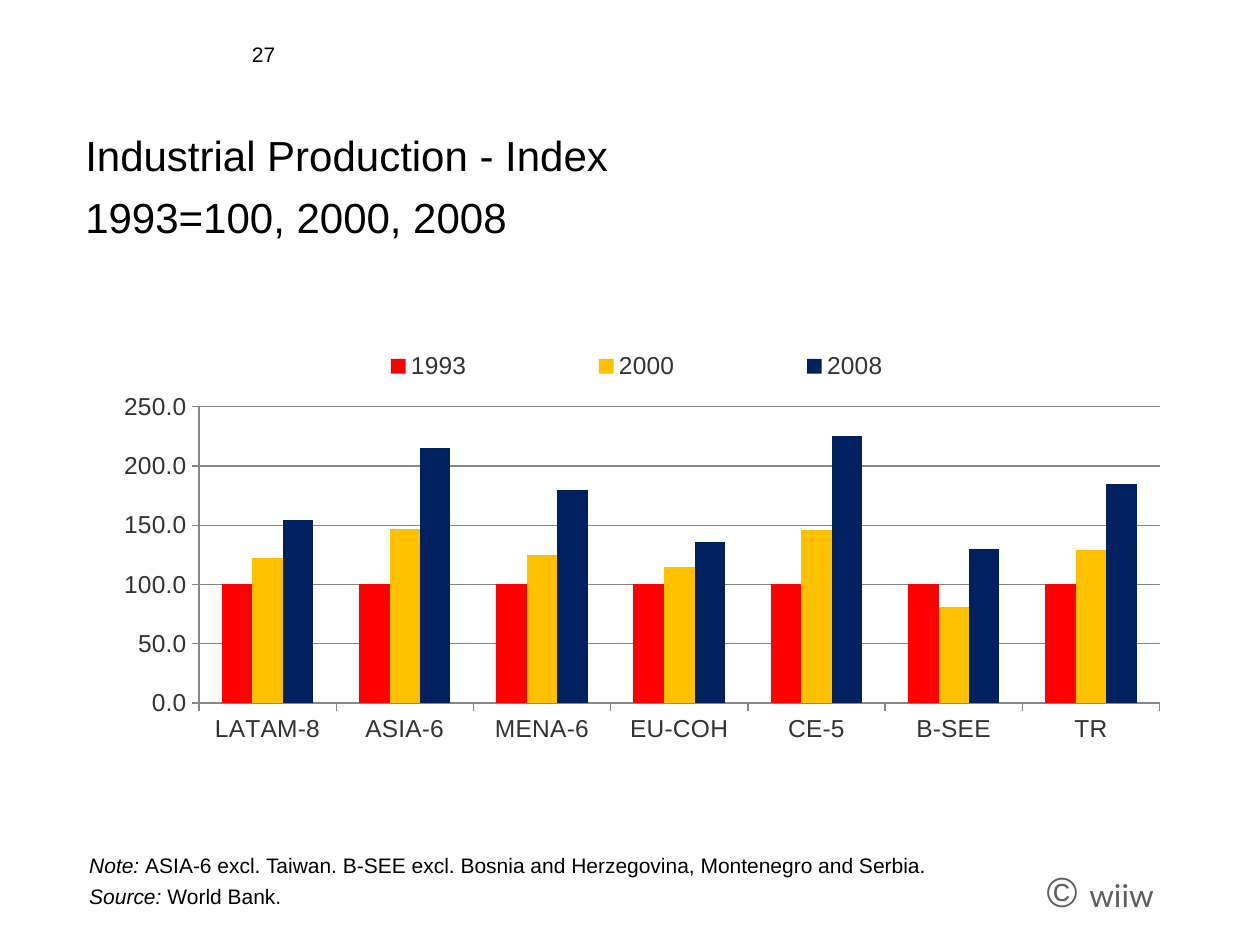
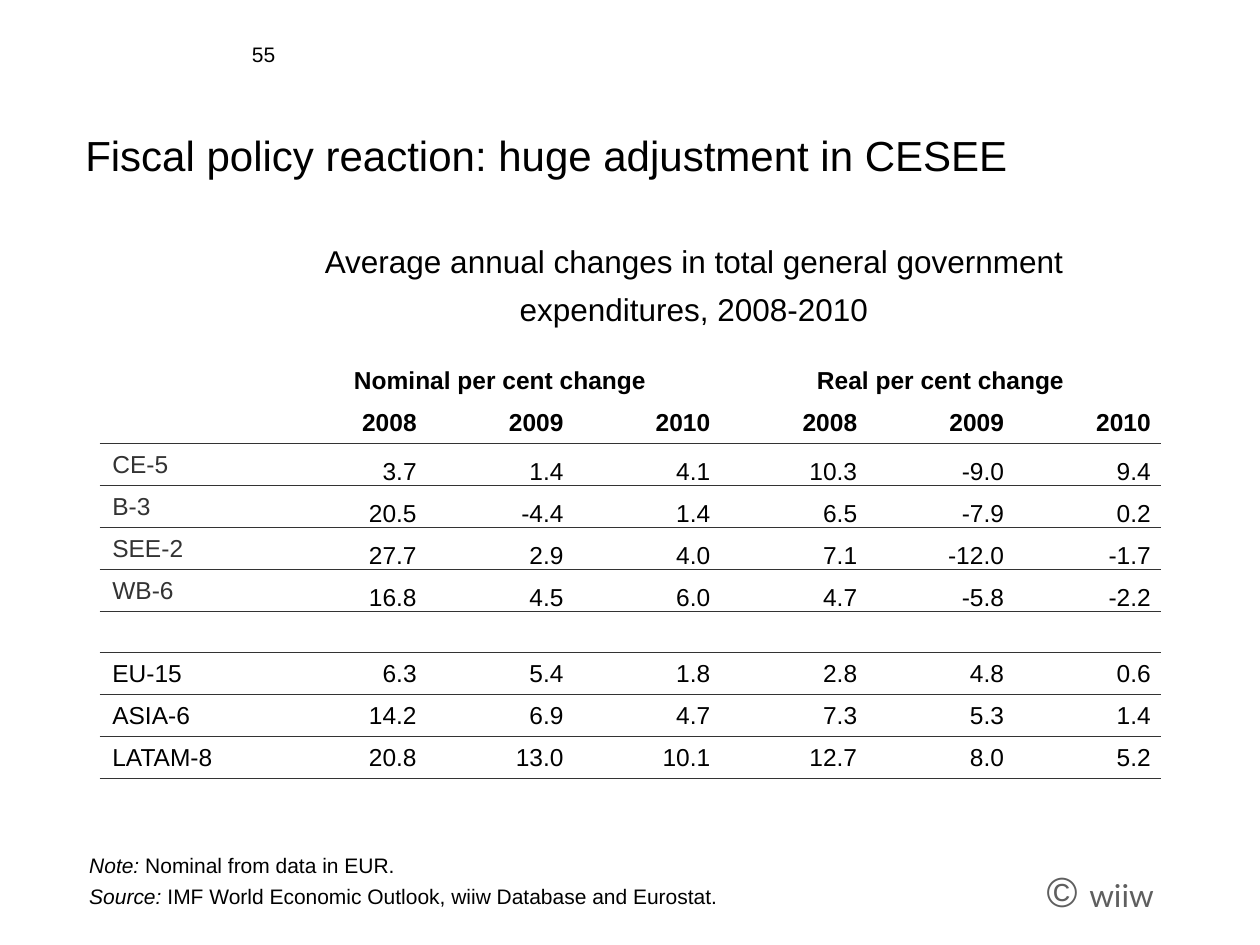
from dataclasses import dataclass

from lxml.etree import SubElement
from pptx import Presentation
from pptx.chart.data import CategoryChartData
from pptx.dml.color import RGBColor
from pptx.enum.chart import (XL_CHART_TYPE as ChartType, XL_LEGEND_POSITION as LegendPos,
                             XL_TICK_LABEL_POSITION as LabelPos, XL_TICK_MARK as Tick)
from pptx.enum.text import MSO_ANCHOR as Anchor, MSO_AUTO_SIZE as AutoSize, PP_ALIGN as Align
from pptx.oxml import parse_xml
from pptx.oxml.ns import nsdecls, qn
from pptx.util import Cm, Pt

FONT = "Arial"
BLACK, DARK, GREY, AXIS = "000000", "333333", "5F5F5F", "878787"
LINE_SPACING = 1.24
NO_STYLE = "{2D5ABB26-0587-4C30-8999-92F81FD0307C}"

CATEGORIES = ["LATAM-8", "ASIA-6", "MENA-6", "EU-COH", "CE-5", "B-SEE", "TR"]
PRODUCTION = {
    "1993": ("FF0000", [100] * 7),
    "2000": ("FFC000", [122, 147, 125, 115, 146, 81, 129]),
    "2008": ("002060", [154, 215, 180, 136, 225, 130, 185]),
}
YEARS = ["2008", "2009", "2010"]
EXPENDITURES = [
    ["", "Nominal per cent change", "", "", "Real per cent change", "", ""],
    ["", *YEARS, *YEARS],
    ["CE-5", "3.7", "1.4", "4.1", "10.3", "-9.0", "9.4"],
    ["B-3", "20.5", "-4.4", "1.4", "6.5", "-7.9", "0.2"],
    ["SEE-2", "27.7", "2.9", "4.0", "7.1", "-12.0", "-1.7"],
    ["WB-6", "16.8", "4.5", "6.0", "4.7", "-5.8", "-2.2"],
    [""] * 7,
    ["EU-15", "6.3", "5.4", "1.8", "2.8", "4.8", "0.6"],
    ["ASIA-6", "14.2", "6.9", "4.7", "7.3", "5.3", "1.4"],
    ["LATAM-8", "20.8", "13.0", "10.1", "12.7", "8.0", "5.2"],
]
HEADER_ROWS = range(2)
CESEE_ROWS = range(2, 6)


@dataclass
class Box:
    left: float
    top: float
    width: float
    height: float

    def emu(self) -> tuple:
        return Cm(self.left), Cm(self.top), Cm(self.width), Cm(self.height)


@dataclass
class Run:
    text: str
    size: float
    color: str = BLACK
    font: str = FONT
    bold: bool = False
    italic: bool = False


@dataclass
class Frame:
    number: str
    title: str
    note: str
    source: str


NUMBER_BOX = Box(4.83, 0.71, 2.41, 0.76)
TITLE_BOX = Box(1.47, 2.24, 21.97, 3.18)
NOTE_BOX = Box(1.55, 17.4, 21.56, 1.04)
COPYRIGHT_BOX = Box(20.85, 17.32, 2.74, 1.27)
CHART_BOX = Box(1.42, 5.97, 21.97, 10.87)
SUBTITLE_BOX = Box(1.52, 4.29, 21.97, 12.67)
TABLE_BOX = Box(2.01, 7.24, 21.39, 8.1)
PLOT_AREA = Box(0.118, 0.205, 0.882, 0.55)
LEGEND_AREA = Box(0.18, 0.09, 0.68, 0.08)


def rgb(color: str) -> RGBColor:
    return RGBColor.from_string(color)


def set_all(target, **values) -> None:
    for name, value in values.items():
        setattr(target, name, value)


def write(p, runs: list[Run]) -> None:
    for run in runs:
        for i, line in enumerate(run.text.split("\n")):
            if i:
                p.add_line_break()
            if line:
                r = p.add_run()
                r.text = line
                set_all(r.font, name=run.font, size=Pt(run.size), bold=run.bold, italic=run.italic)
                r.font.color.rgb = rgb(run.color)


def add_text(s, box: Box, runs: list[Run], spacing: float = 1.0, **frame):
    tf = s.shapes.add_textbox(*box.emu()).text_frame
    set_all(tf, **{"word_wrap": True, "auto_size": AutoSize.NONE, **frame})
    p = tf.paragraphs[0]
    p.line_spacing = spacing
    write(p, runs)
    return p


def add_frame(prs, frame: Frame):
    s = prs.slides.add_slide(prs.slide_layouts[6])
    add_text(s, COPYRIGHT_BOX, [Run("© ", 24, GREY), Run("wiiw", 18, GREY, "Lato")],
             word_wrap=False, auto_size=AutoSize.SHAPE_TO_FIT_TEXT)
    add_text(s, NUMBER_BOX, [Run(frame.number, 12)])
    add_text(s, TITLE_BOX, [Run(frame.title, 24)], LINE_SPACING)
    add_text(s, NOTE_BOX, [Run("Note: ", 12, italic=True), Run(frame.note + "\n", 12),
                           Run("Source: ", 12, italic=True), Run(frame.source, 12)],
             LINE_SPACING, vertical_anchor=Anchor.BOTTOM)
    return s


def manual_layout(area: Box, inner: bool = False):
    target = '<c:layoutTarget val="inner"/>' if inner else ""
    return parse_xml(
        f'<c:layout {nsdecls("c")}><c:manualLayout>{target}'
        '<c:xMode val="edge"/><c:yMode val="edge"/>'
        f'<c:x val="{area.left}"/><c:y val="{area.top}"/>'
        f'<c:w val="{area.width}"/><c:h val="{area.height}"/></c:manualLayout></c:layout>')


def style_line(line) -> None:
    line.color.rgb = rgb(AXIS)
    line.width = Pt(0.75)


def add_production_chart(s) -> None:
    data = CategoryChartData(number_format="0.0")
    data.categories = CATEGORIES
    for year, (_, values) in PRODUCTION.items():
        data.add_series(year, values)
    chart = s.shapes.add_chart(ChartType.COLUMN_CLUSTERED, *CHART_BOX.emu(), data).chart
    set_all(chart, has_title=False, has_legend=True)
    set_all(chart.font, name=FONT, size=Pt(14))
    chart.font.color.rgb = rgb(DARK)
    set_all(chart.legend, position=LegendPos.TOP, include_in_layout=False)
    chart.legend._element.insert(1, manual_layout(LEGEND_AREA))
    plot_area = chart._chartSpace.chart.plotArea
    for layout in plot_area.findall(qn("c:layout")):
        plot_area.remove(layout)
    plot_area.insert(0, manual_layout(PLOT_AREA, inner=True))

    plot = chart.plots[0]
    set_all(plot, gap_width=150, overlap=0, vary_by_categories=False)
    for series, (color, _) in zip(plot.series, PRODUCTION.values()):
        series.format.fill.solid()
        series.format.fill.fore_color.rgb = rgb(color)

    values = chart.value_axis
    for axis in (chart.category_axis, values):
        set_all(axis, major_tick_mark=Tick.OUTSIDE, minor_tick_mark=Tick.NONE)
        style_line(axis.format.line)
    chart.category_axis.tick_label_position = LabelPos.LOW
    set_all(values, minimum_scale=0, maximum_scale=250, major_unit=50, has_major_gridlines=True)
    set_all(values.tick_labels, number_format="0.0", number_format_is_linked=False)
    style_line(values.major_gridlines.format.line)


def add_border(cell, side: str) -> None:
    line = SubElement(cell._tc.get_or_add_tcPr(), qn(f"a:ln{side}"), w=str(Pt(0.25)))
    SubElement(SubElement(line, qn("a:solidFill")), qn("a:srgbClr"), val=DARK)


def fill_cell(cell, row: int, column: int, text: str) -> None:
    if row not in HEADER_ROWS:
        add_border(cell, "T")
    if row != 0:
        add_border(cell, "B")
    cell.fill.background()
    cell.vertical_anchor = Anchor.BOTTOM
    if not text:
        set_all(cell, margin_top=0, margin_bottom=0)
        return
    p = cell.text_frame.paragraphs[0]
    if row == 0:
        p.alignment = Align.CENTER
    elif column:
        p.alignment = Align.RIGHT
        cell.margin_right = Cm(0.2)
        if row in CESEE_ROWS:
            set_all(cell, margin_left=0, margin_top=0, margin_bottom=0)
    color = DARK if row in CESEE_ROWS and column == 0 else BLACK
    write(p, [Run(text, 14, color, bold=row in HEADER_ROWS)])


def add_expenditure_table(s) -> None:
    table = s.shapes.add_table(len(EXPENDITURES), 7, *TABLE_BOX.emu()).table
    set_all(table, first_row=False, horz_banding=False)
    table._tbl.tblPr.find(qn("a:tableStyleId")).text = NO_STYLE
    for i, column in enumerate(table.columns):
        column.width = Cm(2.96 if i else 3.63)
    for i, texts in enumerate(EXPENDITURES):
        table.rows[i].height = Cm(0.81)
        for j, text in enumerate(texts):
            fill_cell(table.cell(i, j), i, j, text)
    for first in (1, 4):
        table.cell(0, first).merge(table.cell(0, first + 2))


def add_subtitle(s) -> None:
    p = add_text(s, SUBTITLE_BOX, [
        Run("\t", 24),
        Run("Average annual changes in total general government expenditures, 2008-2010", 18),
    ], LINE_SPACING)
    p.alignment = Align.CENTER
    indent = Cm(2.97)
    set_all(p._p.get_or_add_pPr(), marL=indent, indent=-indent)


def set_indent(p, indent: int) -> None:
    props = p._p.get_or_add_pPr()
    props.set("marL", str(indent))
    props.set("indent", str(-indent))


def add_subtitle(s) -> None:
    p = add_text(s, SUBTITLE_BOX, [
        Run("\t", 24),
        Run("Average annual changes in total general government expenditures, 2008-2010", 18),
    ], LINE_SPACING)
    p.alignment = Align.CENTER
    set_indent(p, Cm(2.97))


def main() -> None:
    prs = Presentation()
    set_all(prs, slide_width=Cm(25.4), slide_height=Cm(19.05))
    s = add_frame(prs, Frame(
        "27", "Industrial Production - Index\n1993=100, 2000, 2008",
        "ASIA-6 excl. Taiwan. B-SEE excl. Bosnia and Herzegovina, Montenegro and Serbia.",
        "World Bank."))
    add_production_chart(s)
    s = add_frame(prs, Frame(
        "55", "Fiscal policy reaction: huge adjustment in CESEE",
        "Nominal from data in EUR.",
        "IMF World Economic Outlook, wiiw Database and Eurostat."))
    add_subtitle(s)
    add_expenditure_table(s)
    prs.save("out.pptx")


if __name__ == "__main__":
    main()
